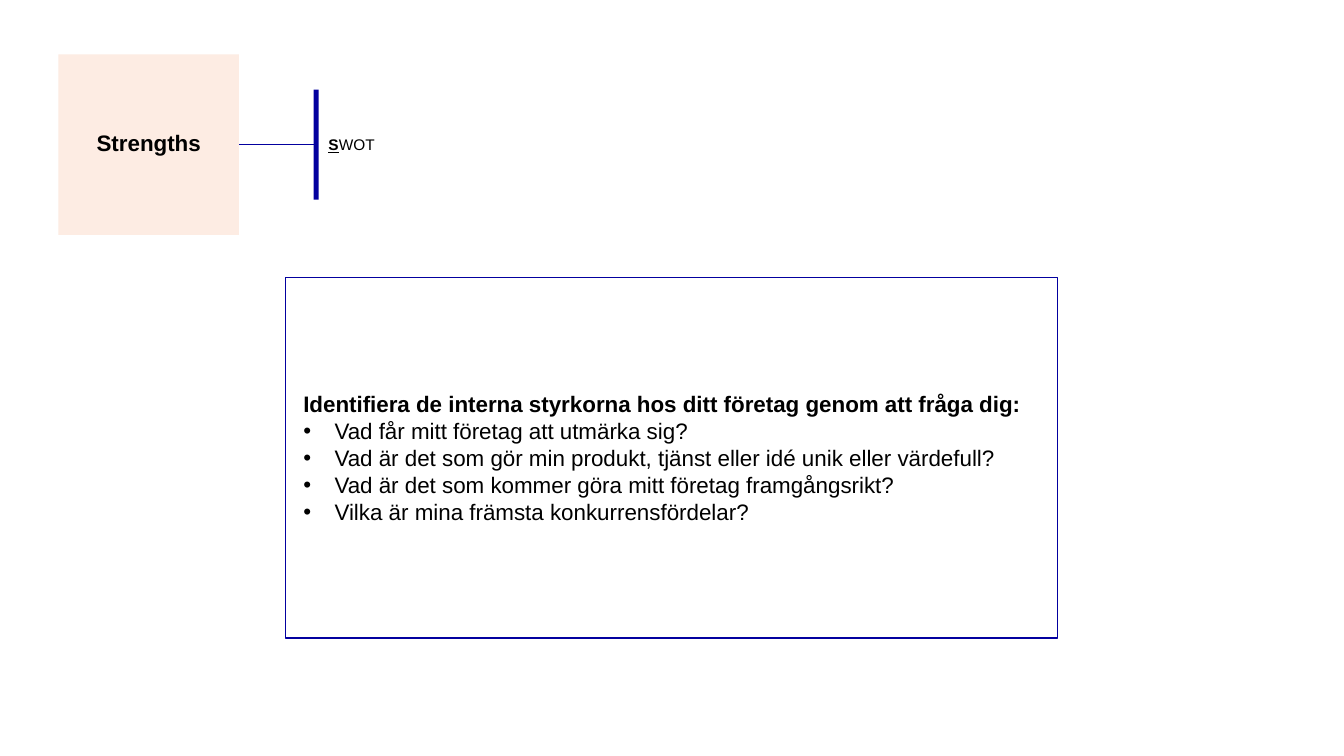
from lxml.etree import SubElement
from pptx import Presentation
from pptx.dml.color import RGBColor
from pptx.enum.shapes import MSO_CONNECTOR as Connector, MSO_SHAPE as Shape
from pptx.enum.text import MSO_ANCHOR as Anchor, PP_ALIGN as Align
from pptx.oxml.ns import qn
from pptx.util import Pt

EMU_PER_PX = 9144
NAVY, PEACH, BLACK = "03009F", "FDECE3", "000000"
HEADING = "Identifiera de interna styrkorna hos ditt företag genom att fråga dig:"
QUESTIONS = [
    "Vad får mitt företag att utmärka sig?",
    "Vad är det som gör min produkt, tjänst eller idé unik eller värdefull?",
    "Vad är det som kommer göra mitt företag framgångsrikt?",
    "Vilka är mina främsta konkurrensfördelar?",
]


def px(*lengths):
    """Convert pixel lengths to EMU."""
    return [length * EMU_PER_PX for length in lengths]


def set_color(color_format, hex_color):
    """Apply a hex colour to a fill, line or font colour."""
    color_format.rgb = RGBColor.from_string(hex_color)


def format_run(run, size, bold=False, underline=False):
    """Style a run as black Arial."""
    run.font.name, run.font.size = "Arial", Pt(size)
    run.font.bold, run.font.underline = bold, underline
    set_color(run.font.color, BLACK)


def add_rectangle(slide, box, fill=None, line=None):
    """Add a flat rectangle with an optional fill and outline."""
    shape = slide.shapes.add_shape(Shape.RECTANGLE, *px(*box))
    shape.shadow.inherit = False
    if fill:
        shape.fill.solid()
        set_color(shape.fill.fore_color, fill)
    else:
        shape.fill.background()
    if line:
        set_color(shape.line.color, line)
        shape.line.width = Pt(1)
    else:
        shape.line.fill.background()
    return shape


def add_title(shape, text):
    """Write a centred bold title in a shape."""
    frame = shape.text_frame
    frame.text, frame.word_wrap = text, True
    frame.vertical_anchor = Anchor.MIDDLE
    frame.margin_left = frame.margin_right = 0
    paragraph = frame.paragraphs[0]
    paragraph.alignment, paragraph.line_spacing = Align.CENTER, 0.9
    format_run(paragraph.runs[0], 16, bold=True)


def add_acronym(slide, box, initial, rest):
    """Add a label whose initial is bold and underlined."""
    frame = slide.shapes.add_textbox(*px(*box)).text_frame
    frame.word_wrap = True
    paragraph = frame.paragraphs[0]
    for text, marked in ((initial, True), (rest, False)):
        run = paragraph.add_run()
        run.text = text
        format_run(run, 11, bold=marked, underline=marked)


def set_indent(paragraph, left, first, bullet=None):
    """Set the indents in pixels and an optional bullet."""
    properties = paragraph._p.get_or_add_pPr()
    for name, value in zip(("marL", "indent"), px(left, first)):
        properties.set(name, str(value))
    if bullet:
        SubElement(properties, qn("a:buFont")).set("typeface", "Arial")
        SubElement(properties, qn("a:buChar")).set("char", bullet)


def add_questions(shape, heading, questions):
    """Write a bold heading followed by bulleted questions."""
    frame = shape.text_frame
    frame.text = "\n".join([heading, *questions])
    frame.word_wrap, frame.vertical_anchor = True, Anchor.MIDDLE
    for index, paragraph in enumerate(frame.paragraphs):
        paragraph.alignment = Align.LEFT
        if index:
            set_indent(paragraph, 39, -31, "•")
        else:
            set_indent(paragraph, 8, 0)
        format_run(paragraph.runs[0], 16, bold=index == 0)


def join(slide, start, start_site, end, end_site):
    """Connect two shapes with a thin straight line."""
    connector = slide.shapes.add_connector(Connector.STRAIGHT, 0, 0, 0, 0)
    connector.begin_connect(start, start_site)
    connector.end_connect(end, end_site)
    set_color(connector.line.color, NAVY)
    connector.line.width = Pt(1)
    SubElement(connector._element.spPr, qn("a:effectLst"))


def main():
    """Build the strengths slide."""
    presentation = Presentation()
    presentation.slide_width, presentation.slide_height = px(1333, 750)
    slide = presentation.slides.add_slide(presentation.slide_layouts[6])
    question_box = add_rectangle(slide, (283, 275, 766, 358), line=NAVY)
    add_questions(question_box, HEADING, QUESTIONS)
    square = add_rectangle(slide, (58, 54, 179, 179), fill=PEACH)
    add_title(square, "Strengths")
    add_acronym(slide, (316, 129, 186, 29), "S", "WOT")
    bar = add_rectangle(slide, (311, 89, 5, 109), fill=NAVY)
    join(slide, bar, 1, square, 3)
    presentation.save("out.pptx")


if __name__ == "__main__":
    main()
